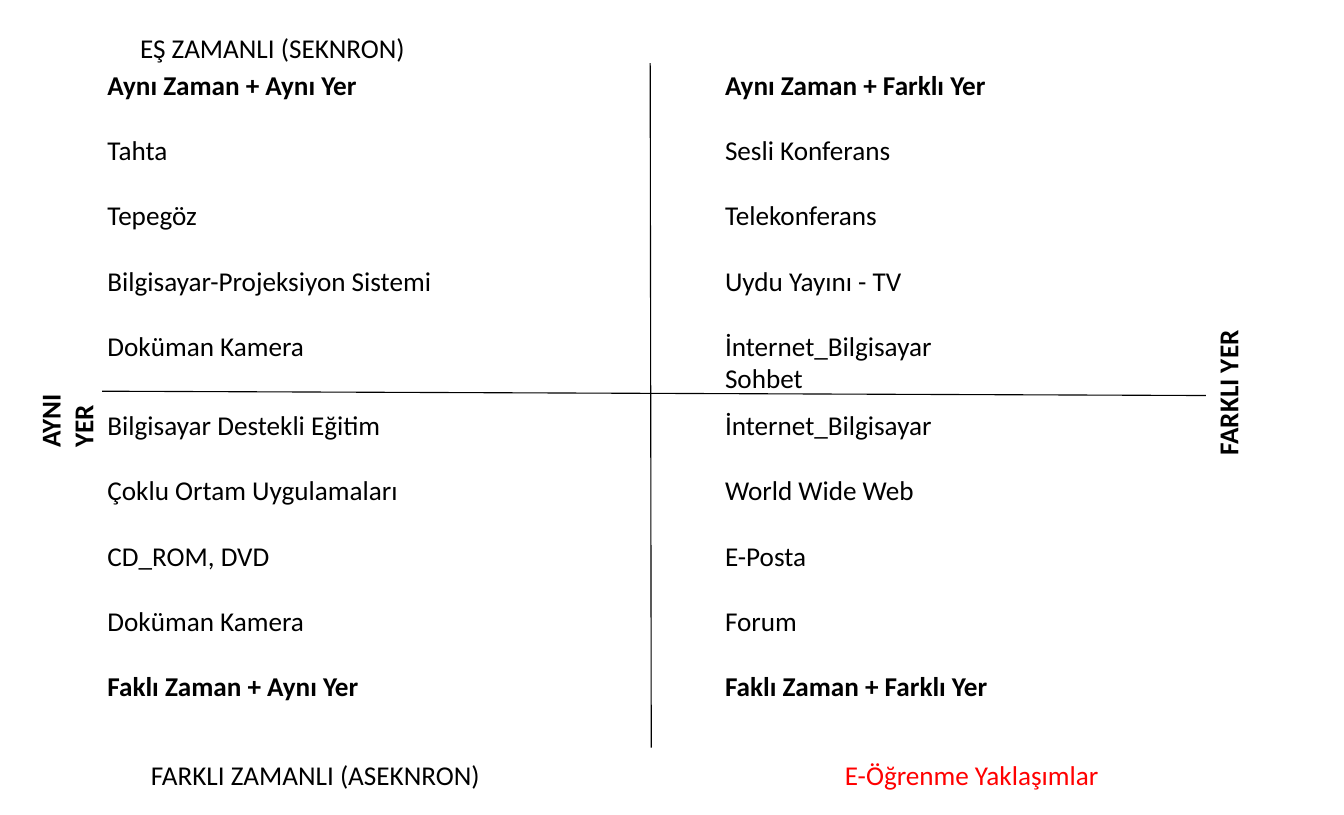
from pptx import Presentation
from pptx.dml.color import RGBColor
from pptx.enum.shapes import MSO_CONNECTOR
from pptx.enum.text import MSO_ANCHOR, MSO_AUTO_SIZE, PP_ALIGN
from pptx.oxml.ns import qn
from pptx.util import Inches, Pt
from lxml import etree

STRAIGHT = MSO_CONNECTOR.STRAIGHT
TOP = MSO_ANCHOR.TOP
GROW = MSO_AUTO_SIZE.SHAPE_TO_FIT_TEXT
LEFT = PP_ALIGN.LEFT

# Content
TITLE = "E-Öğrenme Yaklaşımlar"
# Each quadrant: box height, then items from top to bottom as tuples of lines
SAME_TIME = [
    (3.43, [("Aynı Zaman + Aynı Yer",), ("Tahta",), ("Tepegöz",),
            ("Bilgisayar-Projeksiyon Sistemi",), ("Doküman Kamera",)]),
    (3.13, [("Aynı Zaman + Farklı Yer",), ("Sesli Konferans",), ("Telekonferans",),
            ("Uydu Yayını - TV",), ("İnternet_Bilgisayar", "Sohbet")]),
]
OTHER_TIME = [
    (3.74, [("Bilgisayar Destekli Eğitim",), ("Çoklu Ortam Uygulamaları",),
            ("CD_ROM, DVD",), ("Doküman Kamera",), ("Faklı Zaman + Aynı Yer",)]),
    (3.74, [("İnternet_Bilgisayar",), ("World Wide Web",), ("E-Posta",),
            ("Forum",), ("Faklı Zaman + Farklı Yer",)]),
]
# Row top, upper text margin, index of the bold heading, quadrants
ROWS = [(0.58, 0.05, 0, SAME_TIME), (3.41, 0.35, 4, OTHER_TIME)]
COLUMNS, QUADRANT_W = (0.89, 6.57), 4.8

# Text, box (left, top, width, height)
TIME_LABELS = [
    ("EŞ ZAMANLI (SEKNRON)", (1.19, 0.24, 4.21, 0.4)),
    ("FARKLI ZAMANLI (ASEKNRON)", (1.29, 6.93, 4.21, 0.4)),
]
PLACE_LABELS = [
    ("AYNI YER", (0.26, 3.16, 0.5, 1.06)),
    ("FARKLI YER", (11.09, 2.53, 0.5, 1.76)),
]
TITLE_BOX = (7.67, 6.93, 3.89, 0.4)
AXES = [(5.98, 0.58, 5.99, 6.88), (0.94, 3.6, 11.09, 3.64)]

# Slide size in points, and text style
WIDTH, HEIGHT = 890, 540
FONT, SIZE, ITEM_GAP = "Calibri", 18, 21.6
BLACK, RED = "000000", "FF0000"


def color(hex_string):
    return RGBColor.from_string(hex_string)


def add_run(p, text, bold=False, ink=BLACK):
    p.alignment = LEFT
    r = p.add_run()
    r.text = text
    r.font.name, r.font.size, r.font.bold = FONT, Pt(SIZE), bold
    r.font.color.rgb = color(ink)


def add_box(slide, box):
    tf = slide.shapes.add_textbox(*map(Inches, box)).text_frame
    tf.word_wrap = True
    tf.auto_size = GROW
    return tf


def add_quadrant(slide, box, margin, items, heading):
    tf = add_box(slide, box)
    tf.margin_top = Inches(margin)
    p = tf.paragraphs[0]
    for i, lines in enumerate(items):
        for j, line in enumerate(lines):
            if i or j:
                p = tf.add_paragraph()
            p.space_before = Pt(ITEM_GAP if i and not j else 0)
            add_run(p, line, bold=i == heading)


def add_axis(slide, ends):
    line = slide.shapes.add_connector(STRAIGHT, *map(Inches, ends))
    line.line.color.rgb = color(BLACK)
    line.line.width = Pt(0.75)
    etree.SubElement(line._element.spPr, qn("a:effectLst"))


def main():
    prs = Presentation()
    prs.slide_width = Pt(WIDTH)
    prs.slide_height = Pt(HEIGHT)
    slide = prs.slides.add_slide(prs.slide_layouts[5])

    # Title at the lower right
    title = slide.shapes.title
    title.left, title.top, title.width, title.height = map(Inches, TITLE_BOX)
    tf = title.text_frame
    tf.vertical_anchor, tf.auto_size, tf.word_wrap = TOP, GROW, True
    add_run(tf.paragraphs[0], TITLE, ink=RED)

    # Axes
    for ends in AXES:
        add_axis(slide, ends)

    # Quadrants
    for top, margin, heading, quadrants in ROWS:
        for left, (height, items) in zip(COLUMNS, quadrants):
            box = (left, top, QUADRANT_W, height)
            add_quadrant(slide, box, margin, items, heading)

    # Axis labels
    for text, box in TIME_LABELS:
        add_run(add_box(slide, box).paragraphs[0], text)
    for text, box in PLACE_LABELS:
        tf = add_box(slide, box)
        tf._txBody.bodyPr.set("vert", "vert270")
        add_run(tf.paragraphs[0], text, bold=True)

    prs.save("out.pptx")


if __name__ == "__main__":
    main()
